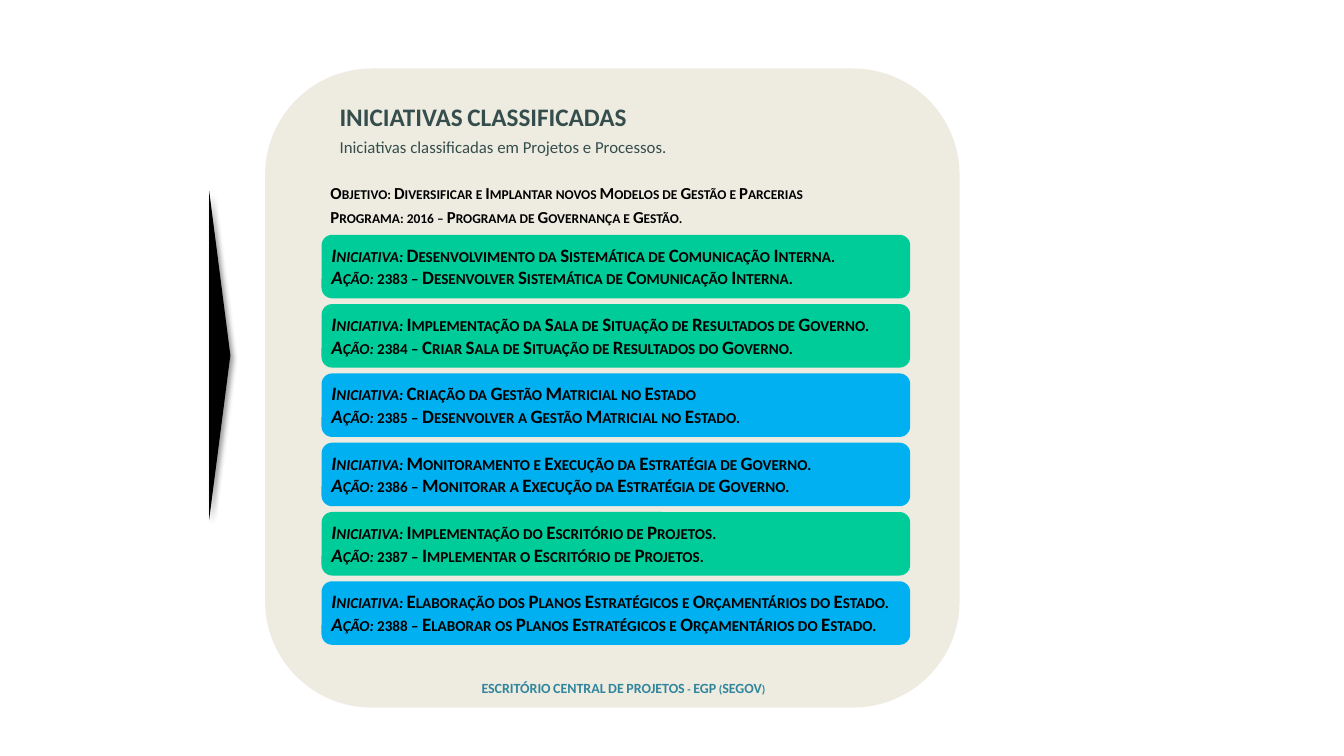
from lxml import etree
from pptx import Presentation
from pptx.dml.color import RGBColor
from pptx.enum.shapes import MSO_SHAPE as Shape
from pptx.enum.text import MSO_AUTO_SIZE as Fit, PP_ALIGN as Align
from pptx.oxml import parse_xml
from pptx.oxml.ns import nsdecls
from pptx.util import Inches, Pt

SAND = RGBColor(0xEE, 0xEC, 0xE1)
GREEN = RGBColor(0x00, 0xCC, 0x99)
BLUE = RGBColor(0x00, 0xB0, 0xF0)
BLACK = RGBColor(0x00, 0x00, 0x00)
SLATE = RGBColor(0x35, 0x4D, 0x4C)
TEAL = RGBColor(0x31, 0x85, 0x9C)

deck = Presentation()
deck.slide_width, deck.slide_height = Inches(13.33), Inches(7.5)
slide = deck.slides.add_slide(deck.slide_layouts[6])
COL, ROW = deck.slide_width / 40, deck.slide_height / 30


def add_form(kind, x, y, w, h, fill):
    """Add a filled preset shape; lengths in grid columns and rows."""
    form = slide.shapes.add_shape(
        kind, int(x * COL), int(y * ROW), int(w * COL), int(h * ROW))
    form.shadow.inherit = False
    form.fill.solid()
    form.fill.fore_color.rgb = fill
    form.line.fill.background()
    return form


def add_text(x, y, w, h, lines, size, color, align=Align.JUSTIFY,
             bold=True, small=True):
    """Add a text box; each line is a list of (words, italic) pairs."""
    box = slide.shapes.add_textbox(
        int(x * COL), int(y * ROW), int(w * COL), int(h * ROW))
    frame = box.text_frame
    frame.word_wrap = True
    frame.auto_size = Fit.SHAPE_TO_FIT_TEXT
    for i, line in enumerate(lines):
        para = frame.add_paragraph() if i else frame.paragraphs[0]
        para.alignment = align
        for words, slant in line:
            run = para.add_run()
            run.text = words
            font = run.font
            font.name, font.size = "Calibri", Pt(size)
            font.bold, font.italic = bold, slant
            font.color.rgb = color
            if small:
                run._r.get_or_add_rPr().set("cap", "small")


add_form(Shape.ROUNDED_RECTANGLE, 7.89, 2.72, 20.67, 25.36, SAND)

cards = [
    (GREEN, "Desenvolvimento da Sistemática de Comunicação Interna.",
     "2383 – Desenvolver Sistemática de Comunicação Interna."),
    (GREEN, "Implementação da Sala de Situação de Resultados de Governo.",
     "2384 – Criar Sala de Situação de Resultados do Governo."),
    (BLUE, "Criação da Gestão Matricial no Estado",
     "2385 – Desenvolver a Gestão Matricial no Estado."),
    (BLUE, "Monitoramento e Execução da Estratégia de Governo.",
     "2386 – Monitorar a Execução da Estratégia de Governo."),
    (GREEN, "Implementação do Escritório de Projetos.",
     "2387 – Implementar o Escritório de Projetos."),
    (BLUE, "Elaboração dos Planos Estratégicos e Orçamentários do Estado.",
     "2388 – Elaborar os Planos Estratégicos e Orçamentários do Estado."),
]
for i, (fill, plan, act) in enumerate(cards):
    top = 9.32 + 2.75 * i
    add_form(Shape.ROUNDED_RECTANGLE, 9.57, top, 17.52, 2.52, fill)
    add_text(9.57, top + 0.14, 17.52, 2.24,
             [[("Iniciativa: ", True), (plan, False)],
              [("Ação: ", True), (act, False)]], 13.5, BLACK)

add_text(9.81, 3.84, 10.2, 3.84, [[("INICIATIVAS CLASSIFICADAS", False)]],
         18, SLATE, Align.LEFT)
add_text(9.81, 5.24, 17.5, 1.2,
         [[("Iniciativas classificadas em Projetos e Processos.", False)]],
         12, SLATE, bold=False, small=False)

heads = [
    "Objetivo: Diversificar e Implantar novos Modelos de Gestão e Parcerias",
    "Programa: 2016 – Programa de Governança e Gestão.",
]
for i, head in enumerate(heads):
    add_text(9.54, 7.04 + 0.96 * i, 15, 1.2, [[(head, False)]], 12, BLACK)

add_text(8.22, 26.76, 20.67, 1.08,
         [[("ESCRITÓRIO CENTRAL DE PROJETOS - EGP (SEGOV)", False)]],
         10, TEAL, Align.CENTER)

arrow = add_form(Shape.ISOSCELES_TRIANGLE, 1.65, 13.68, 9.78, 0.84, BLACK)
arrow.rotation = 90
glow = arrow._element.spPr.find("{*}effectLst")
glow.append(parse_xml(
    f'<a:outerShdw {nsdecls("a")} blurRad="{Pt(4)}" dist="{Pt(3)}" '
    'dir="2700000" algn="tl" rotWithShape="0">'
    '<a:srgbClr val="000000"><a:alpha val="40000"/></a:srgbClr>'
    '</a:outerShdw>'))
etree.cleanup_namespaces(glow)

deck.save("out.pptx")
